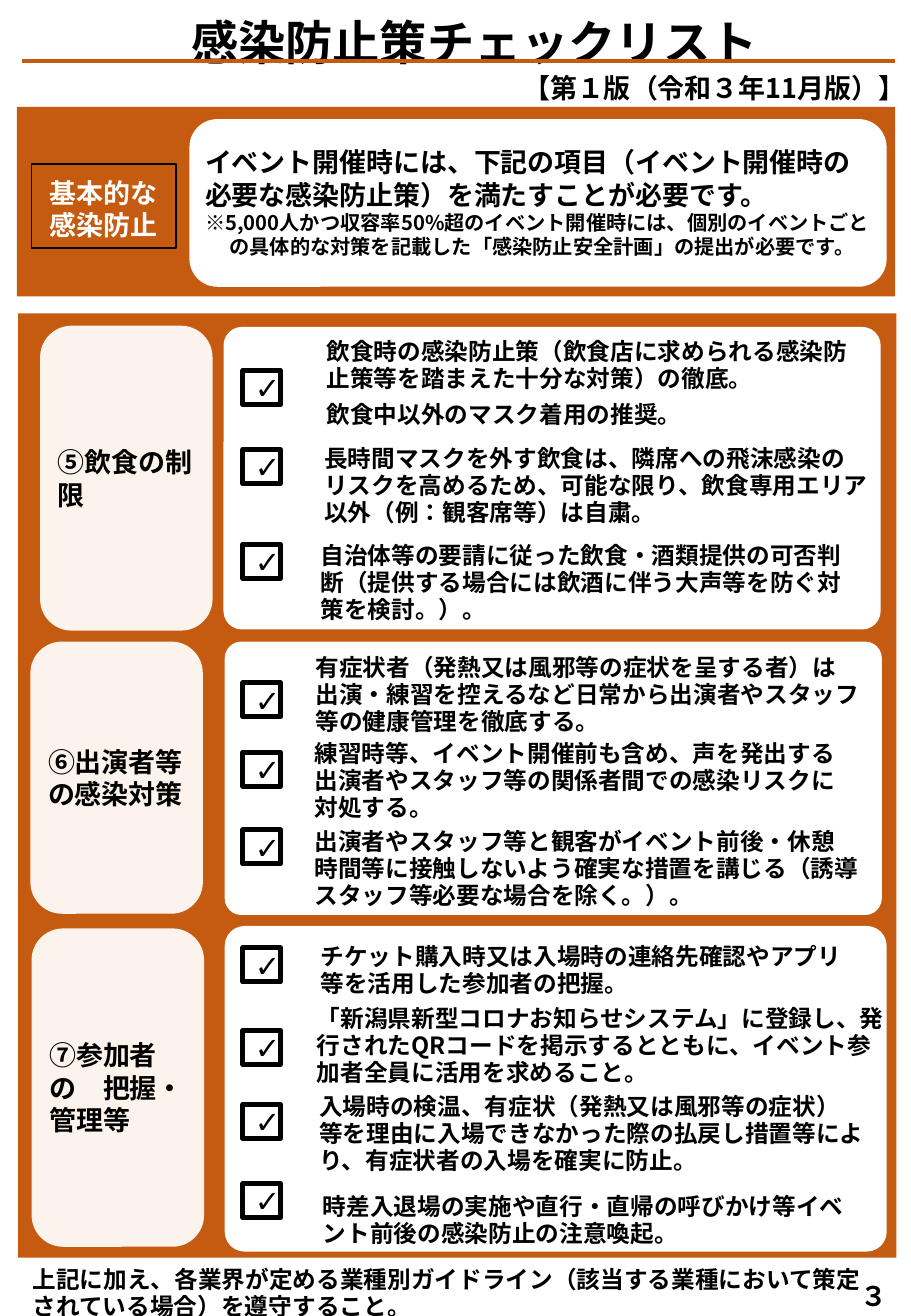
from lxml import etree
from pptx import Presentation
from pptx.dml.color import RGBColor
from pptx.enum.lang import MSO_LANGUAGE_ID
from pptx.enum.shapes import MSO_CONNECTOR, MSO_SHAPE
from pptx.enum.text import MSO_ANCHOR, MSO_AUTO_SIZE, PP_ALIGN
from pptx.oxml.ns import qn
from pptx.util import Inches, Pt

ORANGE = RGBColor(0xC5, 0x5A, 0x11)
CREAM = RGBColor(0xFD, 0xF3, 0xED)
WHITE = RGBColor(0xFF, 0xFF, 0xFF)
BLACK = RGBColor(0x00, 0x00, 0x00)
GOTHIC = "Noto Sans CJK JP"
RECT = MSO_SHAPE.RECTANGLE
ROUND = MSO_SHAPE.ROUNDED_RECTANGLE
TOP, MIDDLE, BOTTOM = MSO_ANCHOR.TOP, MSO_ANCHOR.MIDDLE, MSO_ANCHOR.BOTTOM
LEFT, CENTER = PP_ALIGN.LEFT, PP_ALIGN.CENTER
GROW, FIXED = MSO_AUTO_SIZE.SHAPE_TO_FIT_TEXT, MSO_AUTO_SIZE.NONE
JAPANESE = MSO_LANGUAGE_ID.JAPANESE

deck = Presentation()
deck.slide_width, deck.slide_height = Inches(7.5), Inches(10.83)
slide = deck.slides.add_slide(deck.slide_layouts[5])
shapes = slide.shapes


def draw(kind, place, fill=None, edge=0, bend=None):
    shape = shapes.add_shape(kind, *map(Inches, place))
    shape.shadow.inherit = False
    if fill is None:
        shape.fill.background()
    else:
        shape.fill.solid()
        shape.fill.fore_color.rgb = fill
    if edge:
        shape.line.color.rgb = BLACK
        shape.line.width = Pt(edge)
    else:
        shape.line.fill.background()
    if bend is not None:
        shape.adjustments[0] = bend
    return shape


def write(frame, lines, size, align=LEFT, anchor=TOP, fit=FIXED,
          color=BLACK, font=GOTHIC, bold=True):
    frame.word_wrap = True
    frame.auto_size = fit
    frame.vertical_anchor = anchor
    for spot, words in enumerate(lines):
        para = frame.add_paragraph() if spot else frame.paragraphs[0]
        para.alignment = align
        run = para.add_run()
        run.text = words
        run.font.size = Pt(size)
        run.font.bold = bold
        run.font.name = font
        run.font.color.rgb = color
        run.font.language_id = JAPANESE
        east = etree.SubElement(run.font._element, qn("a:ea"))
        east.set("typeface", font)


title = shapes.title
title.left, title.top, title.width, title.height = map(Inches, (-0.23, 0.06, 8.27, 0.57))
write(title.text_frame, ["感染防止策チェックリスト"], 28, CENTER)

draw(RECT, (0.15, 2.58, 7.23, 7.77), ORANGE)
draw(RECT, (0.14, 0.88, 7.23, 1.56), ORANGE)
draw(ROUND, (1.56, 0.98, 5.74, 1.38), WHITE)
badge = draw(RECT, (0.26, 1.35, 1.19, 0.69), edge=1).text_frame
badge.margin_left = Inches(0.15)
badge.margin_right = Inches(0.05)
badge.margin_top = Inches(0.09)
write(badge, ["基本的な", "感染防止"], 16, anchor=MIDDLE, color=WHITE)

intro = shapes.add_textbox(*map(Inches, (1.59, 1.15, 5.68, 1.07))).text_frame
write(intro, [
    "イベント開催時には、下記の項目（イベント開催時の必要な感染防止策）を満たすことが必要です。",
    "※5,000人かつ収容率50%超のイベント開催時には、個別のイベントごとの具体的な対策を記載した「感染防止安全計画」の提出が必要です。",
], 16)
note = intro.paragraphs[1]
note.runs[0].font.size = Pt(12)
indent = note._p.get_or_add_pPr()
indent.set("marL", str(Inches(0.2)))
indent.set("indent", str(Inches(-0.2)))

rule = shapes.add_connector(MSO_CONNECTOR.STRAIGHT, *map(Inches, (0.18, 0.5, 7.37, 0.5)))
rule.line.color.rgb = ORANGE
rule.line.width = Pt(2.25)
etree.SubElement(rule._element.spPr, qn("a:effectLst"))

panels = [
    ("⑤飲食の制限", (0.33, 2.68, 1.42, 2.51), (1.84, 2.69, 5.41, 2.49)),
    ("⑥出演者等の感染対策", (0.25, 5.28, 1.42, 2.24), (1.85, 5.28, 5.41, 2.25)),
    ("⑦参加者の　把握・管理等", (0.26, 7.64, 1.42, 2.62), (1.85, 7.62, 5.45, 2.68)),
]
for name, side, main in panels:
    draw(ROUND, main, WHITE, bend=0.061)
    label = draw(ROUND, side, CREAM, bend=0.183).text_frame
    label.margin_left = label.margin_right = Inches(0.07)
    label.margin_top = label.margin_bottom = Inches(0.04)
    write(label, [name], 16, anchor=MIDDLE)

items = [
    (2.59, 2.76, 4.68, 0.52, BOTTOM, "飲食時の感染防止策（飲食店に求められる感染防止策等を踏まえた十分な対策）の徹底。"),
    (2.59, 3.25, 4.68, 0.32, BOTTOM, "飲食中以外のマスク着用の推奨。"),
    (2.57, 3.63, 4.68, 0.75, BOTTOM, "長時間マスクを外す飲食は、隣席への飛沫感染のリスクを高めるため、可能な限り、飲食専用エリア以外（例：観客席等）は自粛。"),
    (2.54, 4.43, 4.68, 0.75, BOTTOM, "自治体等の要請に従った飲食・酒類提供の可否判断（提供する場合には飲酒に伴う大声等を防ぐ対策を検討。）。"),
    (2.5, 5.35, 4.68, 0.75, BOTTOM, "有症状者（発熱又は風邪等の症状を呈する者）は出演・練習を控えるなど日常から出演者やスタッフ等の健康管理を徹底する。"),
    (2.49, 6.06, 4.68, 0.75, BOTTOM, "練習時等、イベント開催前も含め、声を発出する出演者やスタッフ等の関係者間での感染リスクに対処する。"),
    (2.49, 6.78, 4.68, 0.75, BOTTOM, "出演者やスタッフ等と観客がイベント前後・休憩時間等に接触しないよう確実な措置を講じる（誘導スタッフ等必要な場合を除く。）。"),
    (2.54, 7.62, 4.68, 0.64, BOTTOM, "チケット購入時又は入場時の連絡先確認やアプリ等を活用した参加者の把握。"),
    (2.51, 8.22, 4.93, 0.79, TOP, "「新潟県新型コロナお知らせシステム」に登録し、発行されたQRコードを掲示するとともに、イベント参加者全員に活用を求めること。"),
    (2.53, 8.83, 4.68, 0.88, BOTTOM, "入場時の検温、有症状（発熱又は風邪等の症状）等を理由に入場できなかった際の払戻し措置等により、有症状者の入場を確実に防止。"),
    (2.56, 9.68, 4.68, 0.63, BOTTOM, "時差入退場の実施や直行・直帰の呼びかけ等イベント前後の感染防止の注意喚起。"),
    (0.17, 10.37, 7.07, 0.55, MIDDLE, "上記に加え、各業界が定める業種別ガイドライン（該当する業種において策定されている場合）を遵守すること。"),
]
for *place, anchor, words in items:
    frame = shapes.add_textbox(*map(Inches, place)).text_frame
    write(frame, [words], 14, anchor=anchor, fit=GROW)
    frame.paragraphs[0].line_spacing = Pt(16)

for place, anchor, words in [
    ((6.9, 10.48, 0.59, 0.37), MIDDLE, "３"),
    ((4.13, 0.54, 3.5, 0.37), TOP, "【第１版（令和３年11月版）】"),
]:
    frame = shapes.add_textbox(*map(Inches, place)).text_frame
    write(frame, [words], 16, CENTER, anchor, GROW)

for top in (3.05, 3.7, 4.48, 5.62, 6.19, 6.83, 7.8, 8.48, 9.09, 9.74):
    check = draw(RECT, (2, top, 0.31, 0.28), edge=3)
    write(check.text_frame, ["✓"], 18, CENTER, MIDDLE, font="Calibri", bold=False)

deck.save("out.pptx")
